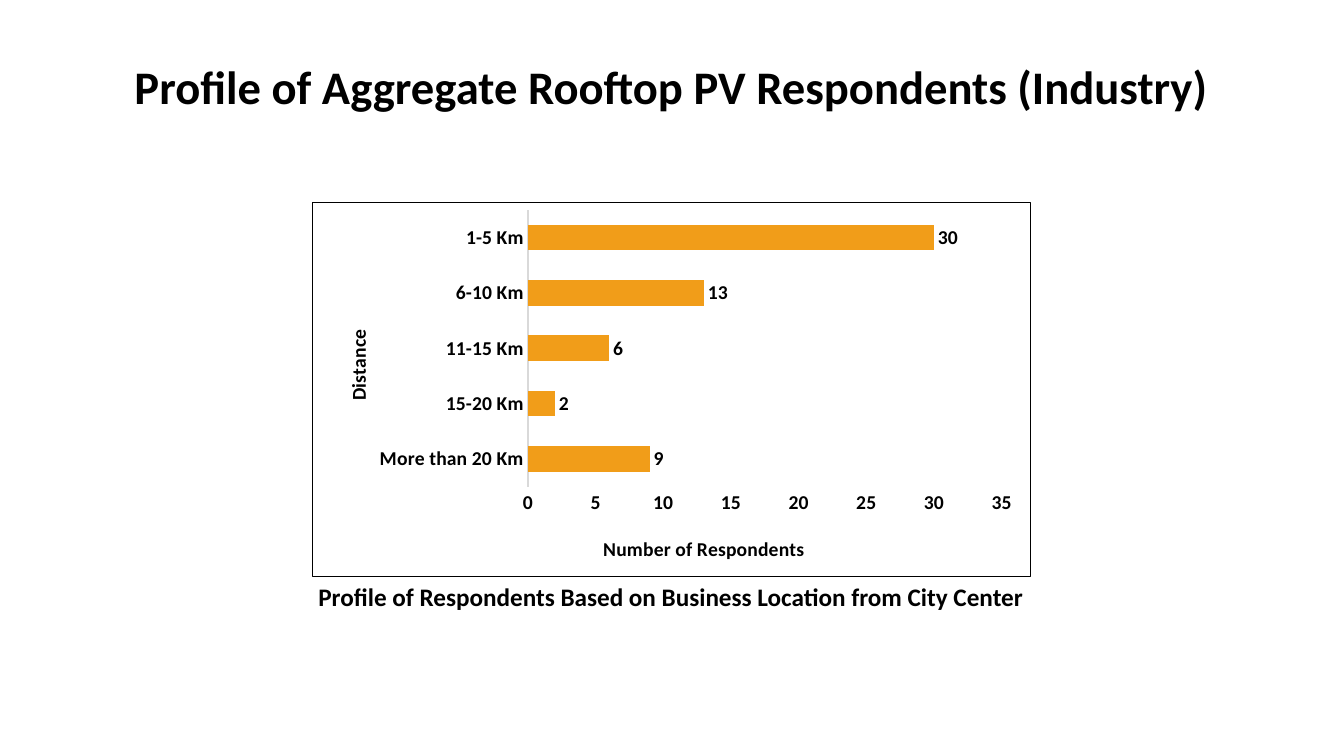
from lxml.etree import SubElement
from pptx import Presentation
from pptx.chart.data import CategoryChartData
from pptx.dml.color import RGBColor
from pptx.enum.chart import XL_CHART_TYPE as ChartType, XL_LABEL_POSITION as LabelPosition, XL_TICK_MARK as TickMark
from pptx.enum.text import MSO_ANCHOR as Anchor, MSO_AUTO_SIZE as AutoSize, PP_ALIGN as Align
from pptx.oxml import parse_xml
from pptx.oxml.ns import nsdecls, qn
from pptx.util import Pt

PX = 914400 / 100.8
THEME = {
    "font": "Calibri",
    "text": RGBColor.from_string("000000"),
    "bar": RGBColor.from_string("F19D19"),
    "axis": RGBColor.from_string("D9D9D9"),
    "title_size": Pt(33.3),
    "caption_size": Pt(18),
    "chart_size": Pt(14),
}


def set_font(font, size):
    font.name = THEME["font"]
    font.size = THEME[size]
    font.bold = True
    font.color.rgb = THEME["text"]


def set_layout(parent, index, **settings):
    for old in parent.findall(qn("c:layout")):
        parent.remove(old)
    layout = parse_xml(f"<c:layout {nsdecls('c')}/>")
    manual = SubElement(layout, qn("c:manualLayout"))
    for name, value in settings.items():
        SubElement(manual, qn(f"c:{name}")).set("val", str(value))
    parent.insert(index, layout)


deck = Presentation()
deck.slide_width, deck.slide_height = round(1344 * PX), round(756 * PX)
page = deck.slides.add_slide(deck.slide_layouts[5])

caption = page.shapes.add_textbox(*[round(n * PX) for n in (264, 576, 814, 40)])
title = page.shapes.title
title.left, title.top, title.width, title.height = [round(n * PX) for n in (123, 40, 1097, 98)]
for box, text, size, anchor, spacing in (
    (caption, "Profile of Respondents Based on Business Location from City Center", "caption_size", Anchor.TOP, 1.0),
    (title, "Profile of Aggregate Rooftop PV Respondents (Industry)", "title_size", Anchor.MIDDLE, 0.9),
):
    frame = box.text_frame
    frame.word_wrap = True
    frame.auto_size = AutoSize.NONE
    frame.vertical_anchor = anchor
    para = frame.paragraphs[0]
    para.text = text
    para.alignment = Align.CENTER
    para.line_spacing = spacing
    set_font(para.font, size)

data = CategoryChartData()
data.categories = ["More than 20 Km", "15-20 Km", "11-15 Km", "6-10 Km", "1-5 Km"]
data.add_series("Series 1", (9, 2, 6, 13, 30))
chart_area = [round(n * PX) for n in (312, 202, 719, 375)]
chart = page.shapes.add_chart(ChartType.BAR_CLUSTERED, *chart_area, data).chart
chart.has_legend = False
chart.has_title = False
set_font(chart.font, "chart_size")

plot = chart.plots[0]
plot.gap_width = 115
plot.overlap = -20
plot.vary_by_categories = False
bars = plot.series[0]
bars.format.fill.solid()
bars.format.fill.fore_color.rgb = THEME["bar"]
labels = bars.data_labels
labels.show_value = True
labels.position = LabelPosition.OUTSIDE_END
set_font(labels.font, "chart_size")

distance, respondents = chart.category_axis, chart.value_axis
for axis, text, x, y in (
    (distance, "Distance", 0.04, 0.33),
    (respondents, "Number of Respondents", 0.4, 0.88),
):
    axis.has_major_gridlines = False
    axis.major_tick_mark = axis.minor_tick_mark = TickMark.NONE
    set_font(axis.tick_labels.font, "chart_size")
    para = axis.axis_title.text_frame.paragraphs[0]
    para.text = text
    set_font(para.font, "chart_size")
    set_layout(axis.axis_title._element, 1, xMode="edge", yMode="edge", x=x, y=y)
distance.format.line.color.rgb = THEME["axis"]
distance.format.line.width = Pt(1)
respondents.format.line.fill.background()
respondents.minimum_scale, respondents.maximum_scale, respondents.major_unit = 0, 35, 5

space = chart._chartSpace
set_layout(space.chart.plotArea, 0, layoutTarget="inner", xMode="edge", yMode="edge", x=0.3, y=0.02, w=0.66, h=0.74)
space.chart.addnext(parse_xml(
    f'<c:spPr {nsdecls("c", "a")}><a:noFill/><a:ln w="{Pt(0.75)}"><a:solidFill>'
    f'<a:srgbClr val="{THEME["text"]}"/></a:solidFill></a:ln></c:spPr>'
))

deck.save("out.pptx")
